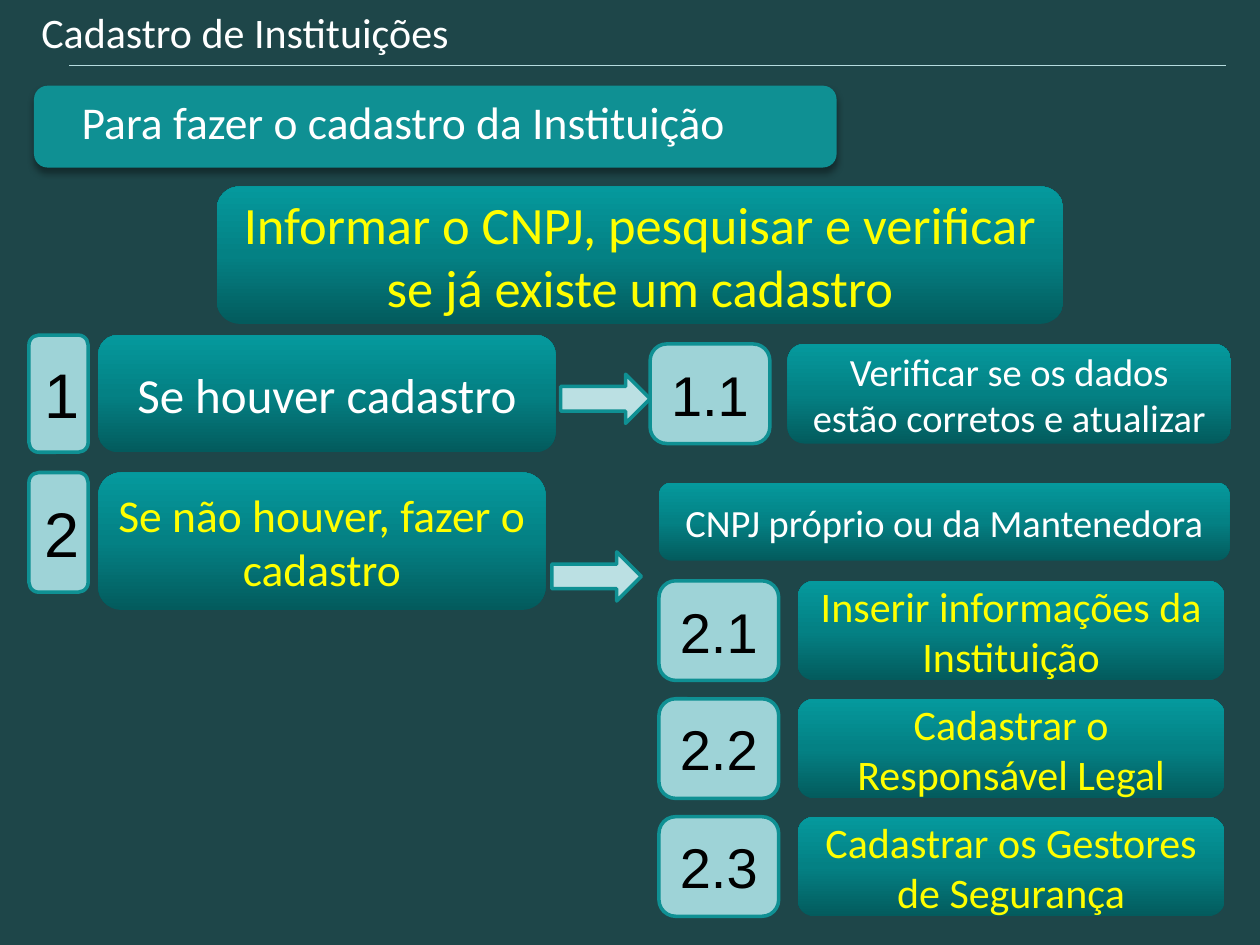
from copy import deepcopy

from lxml import etree
from pptx import Presentation
from pptx import util as u
from pptx.dml.color import RGBColor
from pptx.enum import shapes, text
from pptx.oxml import ns

BACKGROUND = RGBColor(0x1E, 0x46, 0x49)
TEAL = RGBColor(0x0F, 0x90, 0x93)
PALE_TEAL = RGBColor(0x9E, 0xD3, 0xD7)
ARROW = RGBColor(0xBB, 0xE0, 0xE3)
RULE = RGBColor(0xB6, 0xDC, 0xDF)
WHITE = RGBColor(0xFF, 0xFF, 0xFF)
YELLOW = RGBColor(0xFF, 0xFF, 0x00)
BLACK = RGBColor(0, 0, 0)
GRADIENT = (RGBColor(0x03, 0x5B, 0x5D), RGBColor(0x04, 0x81, 0x84), RGBColor(0x05, 0x99, 0x9D))
COLUMNS, ROWS = 100, 75


def add_shadow(effects):
    """Fill an effect list with a soft shadow that falls downwards."""
    shadow = etree.SubElement(effects, ns.qn("a:outerShdw"), blurRad=str(u.Pt(4)),
                              dist=str(u.Pt(3)), dir="5400000", algn="t", rotWithShape="0")
    color = etree.SubElement(shadow, ns.qn("a:srgbClr"), val=str(BLACK))
    etree.SubElement(color, ns.qn("a:alpha"), val="40000")


class FlowSlide:
    """Draws on one slide; every place is (column, row, columns, rows)."""

    def __init__(self, deck):
        self.column = deck.slide_width / COLUMNS
        self.row = deck.slide_height / ROWS
        self.page = deck.slides.add_slide(deck.slide_layouts[6])
        fill = self.page.background.fill
        fill.solid()
        fill.fore_color.rgb = BACKGROUND

    def scale(self, place):
        return [round(n * unit) for n, unit in zip(place, (self.column, self.row) * 2)]

    def label(self, box, words, size, color, font="Calibri", **paragraph_format):
        box.text_frame.word_wrap = True
        para = box.text_frame.paragraphs[0]
        for name, value in paragraph_format.items():
            setattr(para, name, value)
        span = para.add_run()
        span.text = words
        for name, value in {"size": u.Pt(size), "name": font}.items():
            setattr(span.font, name, value)
        span.font.color.rgb = color
        return span

    def shape(self, place, fill=None, line=None, kind=shapes.MSO_SHAPE.ROUNDED_RECTANGLE):
        box = self.page.shapes.add_shape(kind, *self.scale(place))
        box.shadow.inherit = False
        if fill is not None:
            box.fill.solid()
            box.fill.fore_color.rgb = fill
        if line is None:
            box.line.fill.background()
        else:
            box.line.color.rgb = line
            box.line.width = u.Pt(2)
        box.text_frame.vertical_anchor = text.MSO_ANCHOR.MIDDLE
        return box

    def step(self, place, words, size, color=WHITE):
        """A rounded box with a three-stop gradient, dark at the bottom."""
        box = self.shape(place)
        box.fill.gradient()
        box.fill.gradient_angle = 90
        first = box._element.spPr.find(f".//{ns.qn('a:gs')}")
        first.addnext(deepcopy(first))
        for stop, position, shade in zip(box.fill.gradient_stops, (0, 0.5, 1), GRADIENT):
            stop.position = position
            stop.color.rgb = shade
        self.label(box, words, size, color, alignment=text.PP_ALIGN.CENTER)

    def number(self, place, words, size=32):
        box = self.shape(place, PALE_TEAL, TEAL)
        self.label(box, words, size, BLACK, "Arial", alignment=text.PP_ALIGN.CENTER)

    def arrow(self, column, row):
        self.shape((column, row, 7.1, 3.9), ARROW, TEAL, shapes.MSO_SHAPE.RIGHT_ARROW)

    def banner(self, place):
        box = self.shape(place, TEAL)
        add_shadow(box._element.spPr.find(ns.qn("a:effectLst")))

    def heading(self, place, words, size):
        box = self.page.shapes.add_textbox(*self.scale(place))
        span = self.label(box, words, size, WHITE)
        effects = etree.Element(ns.qn("a:effectLst"))
        span.font._element.find(ns.qn("a:solidFill")).addnext(effects)
        add_shadow(effects)

    def rule(self, left, right, row):
        line = self.page.shapes.add_connector(
            shapes.MSO_CONNECTOR.STRAIGHT, *self.scale((left, row, right, row)))
        line.line.color.rgb = RULE
        line.line.width = u.Pt(0.75)
        add_shadow(etree.SubElement(line._element.spPr, ns.qn("a:effectLst")))


def main():
    deck = Presentation()
    deck.slide_width, deck.slide_height = u.Inches(10), u.Inches(7.5)
    slide = FlowSlide(deck)

    slide.heading((2.3, 0, 36.3, 5.1), "Cadastro de Instituições", 24)
    slide.rule(5.5, 97.3, 5.2)
    slide.banner((2.7, 6.8, 63.7, 6.5))
    slide.heading((5.5, 7, 60.2, 5.4), "Para fazer o cadastro da Instituição", 26)
    slide.step((17.2, 14.8, 67.2, 10.9),
               "Informar o CNPJ, pesquisar e verificar se já existe um cadastro", 30, YELLOW)

    slide.number((2.3, 26.6, 4.7, 9.3), "1", 36)
    slide.step((7.8, 26.6, 36.3, 9.3), "Se houver cadastro", 28)
    slide.arrow(44.5, 29.7)
    slide.number((51.6, 27.3, 9.5, 7.9), "1.1")
    slide.step((62.5, 27.3, 35.2, 7.9), "Verificar se os dados estão corretos e atualizar", 22)

    slide.number((2.3, 37.5, 4.7, 9.5), "2", 36)
    slide.step((7.8, 37.5, 35.5, 10.9), "Se não houver, fazer o cadastro", 26, YELLOW)
    slide.arrow(43.8, 43.8)
    slide.step((52.3, 38.3, 45.3, 6.2), "CNPJ próprio ou da Mantenedora", 22)
    substeps = ("Inserir informações da Instituição", "Cadastrar o Responsável Legal",
                "Cadastrar os Gestores de Segurança")
    for index, words in enumerate(substeps):
        row = 46.1 + 9.36 * index
        slide.number((52.3, row, 9.5, 7.9), f"2.{index + 1}")
        slide.step((63.3, row, 33.9, 7.9), words, 24, YELLOW)

    deck.save("out.pptx")


if __name__ == "__main__":
    main()
